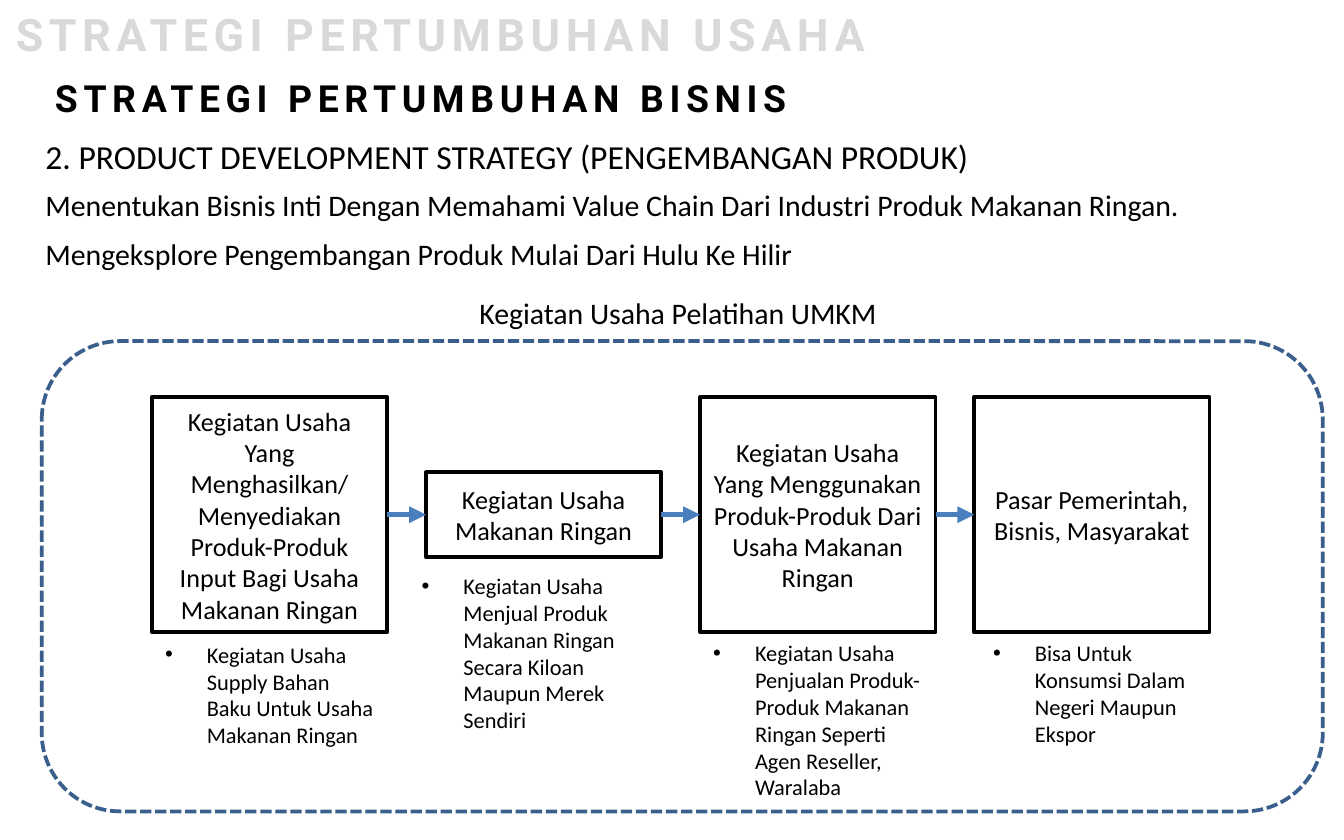
from lxml import etree
from pptx import Presentation
from pptx.dml.color import RGBColor
from pptx.enum.dml import MSO_LINE
from pptx.enum.shapes import MSO_CONNECTOR, MSO_SHAPE
from pptx.enum.text import MSO_ANCHOR, MSO_AUTO_SIZE, PP_ALIGN
from pptx.oxml.ns import qn
from pptx.util import Cm, Pt

STRAIGHT = MSO_CONNECTOR.STRAIGHT
RECTANGLE = MSO_SHAPE.RECTANGLE
ROUNDED = MSO_SHAPE.ROUNDED_RECTANGLE
DASH = MSO_LINE.SQUARE_DOT
MIDDLE = MSO_ANCHOR.MIDDLE
GROW = MSO_AUTO_SIZE.SHAPE_TO_FIT_TEXT
LEFT, CENTER = PP_ALIGN.LEFT, PP_ALIGN.CENTER
RIGHT_SIDE, LEFT_SIDE = 3, 1

COLORS = {
    "text": "000000",
    "faded": "D9D9D9",
    "frame": "3A5F8C",
    "arrow": "4B7EBC",
}

FIRST_LEFT, STEP, STAGE_WIDTH, STAGE_MIDDLE = 2.87, 5.18, 4.45, 9.73

HEADINGS = [
    ("STRATEGI PERTUMBUHAN USAHA", (0.05, 0, 25.4, 1.27), 24, "faded"),
    ("STRATEGI PERTUMBUHAN BISNIS", (0.79, 1.3, 23.93, 1.11), 20, "text"),
]

STATEMENTS = [
    ("2. PRODUCT DEVELOPMENT STRATEGY (PENGEMBANGAN PRODUK)",
     (0.61, 2.44, 18.11, 1.02), 18, False),
    ("Menentukan Bisnis Inti Dengan Memahami Value Chain Dari Industri "
     "Produk Makanan Ringan.", (0.61, 3.4, 23.11, 0.94), 16, True),
    ("Mengeksplore Pengembangan Produk Mulai Dari Hulu Ke Hilir",
     (0.61, 4.34, 14.78, 0.94), 16, False),
    ("Kegiatan Usaha Pelatihan UMKM", (8.81, 5.44, 8.1, 0.94), 16, False),
]

STAGES = [
    (["Kegiatan Usaha Yang Menghasilkan/",
      "Menyediakan Produk-Produk Input Bagi Usaha Makanan Ringan"], 4.45),
    (["Kegiatan Usaha Makanan Ringan"], 1.6),
    (["Kegiatan Usaha Yang Menggunakan Produk-Produk Dari Usaha Makanan Ringan"], 4.45),
    (["Pasar Pemerintah, Bisnis, Masyarakat"], 4.45),
]

DETAILS = [
    ("Kegiatan Usaha Supply Bahan Baku Untuk Usaha Makanan Ringan",
     2.87, 11.99, 2.82),
    ("Kegiatan Usaha Menjual Produk Makanan Ringan Secara Kiloan Maupun Merek Sendiri",
     7.72, 10.69, 3.33),
    ("Kegiatan Usaha Penjualan Produk-Produk Makanan Ringan Seperti Agen Reseller, Waralaba",
     13.23, 11.96, 3.33),
    ("Bisa Untuk Konsumsi Dalam Negeri Maupun Ekspor",
     18.52, 11.96, 2.31),
]


def apply_format(target, values):
    for name, value in values.items():
        setattr(target, name, value)


class SlideBuilder:
    font = "Calibri"
    heading_font = "Roboto"

    def __init__(self, slide):
        self.slide = slide

    def add_words(self, frame, paragraphs, size, color="text", align=LEFT,
                  font=None, bold=False, spacing=0, bullet=False):
        for index, words in enumerate(paragraphs):
            paragraph = frame.add_paragraph() if index else frame.paragraphs[0]
            paragraph.alignment = align
            if bullet:
                self.bullet(paragraph)
            run = paragraph.add_run()
            run.text = words
            apply_format(run.font, {"name": font or self.font, "size": Pt(size), "bold": bold})
            run.font.color.rgb = RGBColor.from_string(COLORS[color])
            if spacing:
                run._r.get_or_add_rPr().set("spc", str(spacing * 100))

    def bullet(self, paragraph):
        properties = paragraph._p.get_or_add_pPr()
        properties.set("marL", str(Cm(0.79)))
        properties.set("indent", str(-Cm(0.79)))
        etree.SubElement(properties, qn("a:buFont")).set("typeface", "Arial")
        etree.SubElement(properties, qn("a:buChar")).set("char", "•")

    def text(self, words, place, size, wrap=True, **style):
        box = self.slide.shapes.add_textbox(*map(Cm, place))
        apply_format(box.text_frame, {"word_wrap": wrap, "auto_size": GROW})
        self.add_words(box.text_frame, [words], size, **style)

    def heading(self, words, place, size, color):
        self.text(words, place, size, color=color, font=self.heading_font,
                  bold=True, spacing=3)

    def outline(self, kind, place, color):
        shape = self.slide.shapes.add_shape(kind, *map(Cm, place))
        shape.shadow.inherit = False
        shape.fill.background()
        shape.line.width = Pt(2)
        shape.line.color.rgb = RGBColor.from_string(COLORS[color])
        return shape

    def frame(self, place):
        self.outline(ROUNDED, place, "frame").line.dash_style = DASH

    def stage(self, paragraphs, place):
        box = self.outline(RECTANGLE, place, "text")
        apply_format(box.text_frame, {"word_wrap": True, "vertical_anchor": MIDDLE})
        self.add_words(box.text_frame, paragraphs, 14, align=CENTER)
        return box

    def arrow(self, source, target):
        arrow = self.slide.shapes.add_connector(STRAIGHT, 0, 0, 0, 0)
        arrow.begin_connect(source, RIGHT_SIDE)
        arrow.end_connect(target, LEFT_SIDE)
        arrow.line.width = Pt(3)
        arrow.line.color.rgb = RGBColor.from_string(COLORS["arrow"])
        properties = arrow._element.spPr
        etree.SubElement(properties.find(qn("a:ln")), qn("a:tailEnd")).set("type", "triangle")
        etree.SubElement(properties, qn("a:effectLst"))


def main():
    presentation = Presentation()
    apply_format(presentation, {"slide_width": Cm(25.4), "slide_height": Cm(15.88)})
    builder = SlideBuilder(presentation.slides.add_slide(presentation.slide_layouts[6]))

    for heading in HEADINGS:
        builder.heading(*heading)
    for statement in STATEMENTS:
        builder.text(*statement)

    builder.frame((0.79, 6.45, 24.21, 8.89))
    stages = [
        builder.stage(paragraphs, (FIRST_LEFT + STEP * column, STAGE_MIDDLE - height / 2,
                                   STAGE_WIDTH, height))
        for column, (paragraphs, height) in enumerate(STAGES)
    ]
    for source, target in zip(stages, stages[1:]):
        builder.arrow(source, target)
    for words, left, top, height in DETAILS:
        builder.text(words, (left, top, STAGE_WIDTH, height), 12, bullet=True)

    presentation.save("out.pptx")


if __name__ == "__main__":
    main()
